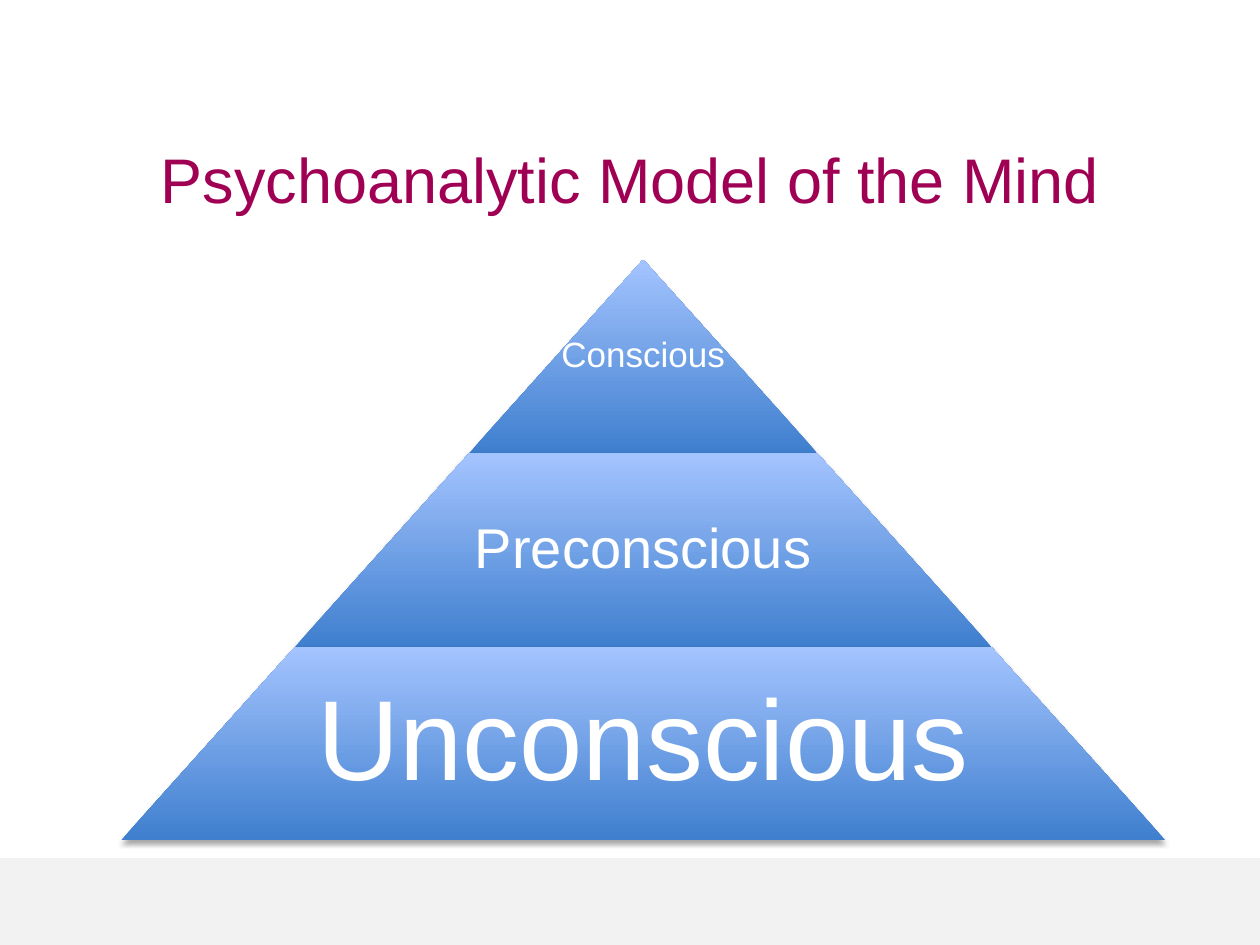
from dataclasses import dataclass
from lxml.etree import SubElement as Sub
from pptx import Presentation
from pptx.dml.color import RGBColor as RGB
from pptx.enum.shapes import MSO_SHAPE as Shape
from pptx.enum.text import MSO_ANCHOR as Anchor, PP_ALIGN as Align
from pptx.oxml.ns import qn
from pptx.util import Inches, Pt


@dataclass(frozen=True)
class Theme:
    font: str = "Arial"
    title: str = "A00054"
    text: str = "FFFFFF"
    band: str = "F2F2F2"
    dark: str = "3F7FCE"
    light: str = "A4C4FF"
    shade: str = "000000"
    head: int = 36
    sizes: tuple = (20, 32, 65)


THEME = Theme()
TIERS = ("Conscious", "Preconscious", "Unconscious")
PADS = (0.03, 0.04, 0.09)
LEFT, TOP, WIDTH, HEIGHT = 0.96, 2.06, 8.29, 4.61


def place(left, top, width, height):
    return [Inches(v) for v in (left, top, width, height)]


def write(frame, text, size, color, pad):
    frame.text = text
    frame.word_wrap = True
    frame.vertical_anchor = Anchor.MIDDLE
    frame.margin_left = frame.margin_right = Inches(pad)
    frame.margin_top = frame.margin_bottom = Inches(pad)
    para = frame.paragraphs[0]
    para.alignment = Align.CENTER
    font = para.runs[0].font
    font.name, font.size = THEME.font, Pt(size)
    font.color.rgb = RGB.from_string(color)
    return para


def add_title(slide, text):
    title = slide.shapes.title
    title.left, title.top, title.width, title.height = place(0.75, 1.04, 8.5, 0.75)
    write(title.text_frame, text, THEME.head, THEME.title, 0.05)


def add_band(slide):
    band = slide.shapes.add_shape(Shape.RECTANGLE, *place(0, 6.81, 10, 0.69))
    band.shadow.inherit = False
    band.fill.solid()
    band.fill.fore_color.rgb = RGB.from_string(THEME.band)
    band.line.fill.background()


def add_shade(shape):
    shape.shadow.inherit = False
    effects = shape.element.spPr.find(qn("a:effectLst"))
    shade = Sub(effects, qn("a:outerShdw"), blurRad=str(Pt(3.1)),
                dist=str(Pt(1.8)), dir="5400000", rotWithShape="0")
    color = Sub(shade, qn("a:srgbClr"), val=THEME.shade)
    Sub(color, qn("a:alpha"), val="35000")


def add_tier(group, index, text):
    count = len(TIERS)
    tall = HEIGHT / count
    top = TOP + index * tall
    wide = WIDTH * (index + 1) / count
    mid = LEFT + WIDTH / 2
    tier = group.shapes.add_shape(
        Shape.TRAPEZOID, *place(mid - wide / 2, top, wide, tall))
    tier.adjustments[0] = 0.9
    tier.fill.gradient()
    tier.fill.gradient_angle = 90
    for stop, color in zip(tier.fill.gradient_stops, (THEME.dark, THEME.light)):
        stop.color.rgb = RGB.from_string(color)
    tier.line.fill.background()
    add_shade(tier)

    span = wide * 0.65 if index else wide
    label = group.shapes.add_textbox(*place(mid - span / 2, top, span, tall))
    para = write(label.text_frame, text, THEME.sizes[index], THEME.text, PADS[index])
    para.line_spacing = 0.9


def main():
    deck = Presentation()
    deck.slide_width, deck.slide_height = Inches(10), Inches(7.5)
    slide = deck.slides.add_slide(deck.slide_layouts[5])
    add_band(slide)
    add_title(slide, "Psychoanalytic Model of the Mind")
    group = slide.shapes.add_group_shape()
    for index, text in enumerate(TIERS):
        add_tier(group, index, text)
    deck.save("out.pptx")


if __name__ == "__main__":
    main()
